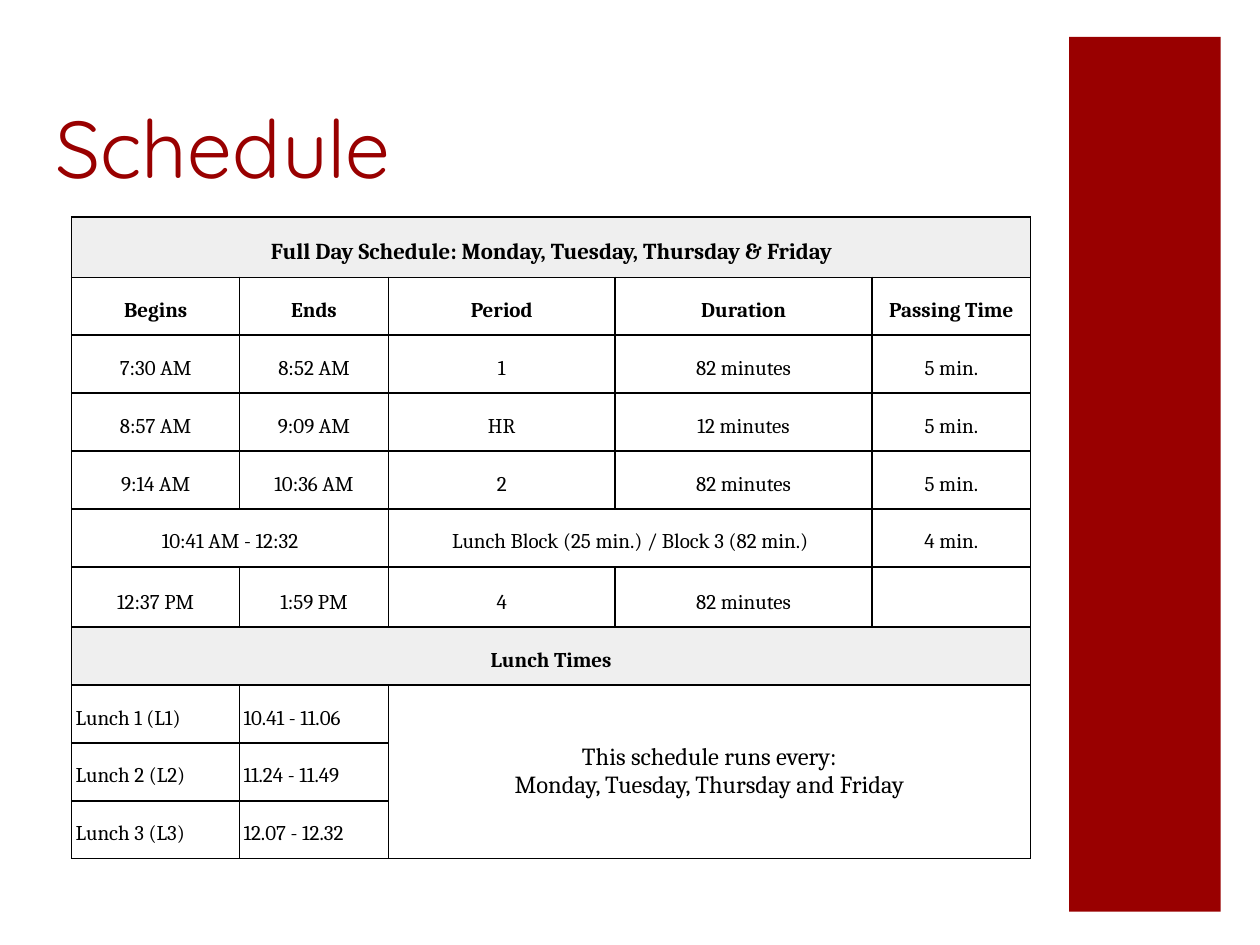
from dataclasses import dataclass

from lxml.etree import SubElement
from pptx import Presentation
from pptx.dml.color import RGBColor
from pptx.enum.shapes import MSO_SHAPE
from pptx.enum.text import MSO_ANCHOR, PP_ALIGN
from pptx.oxml.ns import qn
from pptx.util import Pt


@dataclass(frozen=True)
class Theme:
    accent: str = "990000"
    ink: str = "000000"
    band: str = "EFEFEF"
    paper: str = "FFFFFF"
    title_font: str = "Quicksand"
    body_font: str = "Cambria"
    title_size: float = 46
    heading_size: float = 13
    body_size: float = 12
    note_size: float = 14
    border: float = 1


THEME = Theme()
COLUMN_WIDTHS = [96, 85, 129.5, 147, 90.5]
ROW_HEIGHTS = [34.5] + [33.1] * 5 + [34.5] + [33.1] * 4
HEADING_ROW, HEADER_ROW, LUNCH_ROW = 0, 1, 7
NOTE_CELL = (8, 2)

# None marks a cell covered by a merge.
ROWS = [
    ["Full Day Schedule: Monday, Tuesday, Thursday & Friday", None, None, None, None],
    ["Begins", "Ends", "Period", "Duration", "Passing Time"],
    ["7:30 AM", "8:52 AM", "1", "82 minutes", "5 min."],
    ["8:57 AM", "9:09 AM", "HR", "12 minutes", "5 min."],
    ["9:14 AM", "10:36 AM", "2", "82 minutes", "5 min."],
    ["10:41 AM - 12:32", None, "Lunch Block (25 min.) / Block 3 (82 min.)", None, "4 min."],
    ["12:37 PM", "1:59 PM", "4", "82 minutes", ""],
    ["Lunch Times", None, None, None, None],
    ["Lunch 1 (L1)", "10.41 - 11.06",
     "This schedule runs every:\nMonday, Tuesday, Thursday and Friday", None, None],
    ["Lunch 2 (L2)", "11.24 - 11.49", None, None, None],
    ["Lunch 3 (L3)", "12.07 - 12.32", None, None, None],
]
MERGES = [
    ((0, 0), (0, 4)),
    ((5, 0), (5, 1)),
    ((5, 2), (5, 3)),
    ((7, 0), (7, 4)),
    ((8, 2), (10, 4)),
]


def write_text(frame, text, *, font, size, color, bold=False,
               align=PP_ALIGN.LEFT, spacing=1.0):
    """Fill a text frame, one paragraph for each line of text."""
    for index, line in enumerate(text.split("\n")):
        paragraph = frame.add_paragraph() if index else frame.paragraphs[0]
        paragraph.alignment = align
        paragraph.line_spacing = spacing
        if not line:
            # An empty cell needs its own type size, or its row grows.
            SubElement(paragraph._p, qn("a:endParaRPr"), sz=str(int(size * 100)))
            continue
        run = paragraph.add_run()
        run.text = line
        run.font.name = font
        run.font.size = Pt(size)
        run.font.bold = bold
        run.font.color.rgb = RGBColor.from_string(color)


def set_borders(cell, color, width):
    properties = cell._tc.get_or_add_tcPr()
    for index, side in enumerate(("lnL", "lnR", "lnT", "lnB")):
        line = SubElement(properties, qn(f"a:{side}"), w=str(int(Pt(width))))
        fill = SubElement(line, qn("a:solidFill"))
        SubElement(fill, qn("a:srgbClr"), val=color)
        properties.insert(index, line)


class SlideBuilder:
    def __init__(self, slide, theme):
        self.slide = slide
        self.theme = theme

    def title(self, text, left, top, width, height):
        shape = self.slide.shapes.title
        shape.left, shape.top = Pt(left), Pt(top)
        shape.width, shape.height = Pt(width), Pt(height)
        shape.text_frame.vertical_anchor = MSO_ANCHOR.BOTTOM
        write_text(shape.text_frame, text, font=self.theme.title_font,
                   size=self.theme.title_size, color=self.theme.accent)

    def side_bar(self, left, top, width, height):
        shape = self.slide.shapes.add_shape(
            MSO_SHAPE.RECTANGLE, Pt(left), Pt(top), Pt(width), Pt(height))
        shape.shadow.inherit = False
        shape.fill.solid()
        shape.fill.fore_color.rgb = RGBColor.from_string(self.theme.accent)
        shape.line.fill.background()

    def schedule_table(self, left, top):
        frame = self.slide.shapes.add_table(
            len(ROWS), len(COLUMN_WIDTHS), Pt(left), Pt(top),
            Pt(sum(COLUMN_WIDTHS)), Pt(sum(ROW_HEIGHTS)))
        table = frame.table
        table.first_row = table.horz_banding = False
        for column, width in zip(table.columns, COLUMN_WIDTHS):
            column.width = Pt(width)
        for row, height in zip(table.rows, ROW_HEIGHTS):
            row.height = Pt(height)
        for first, last in MERGES:
            table.cell(*first).merge(table.cell(*last))
        for row, texts in enumerate(ROWS):
            for column, text in enumerate(texts):
                self.schedule_cell(table.cell(row, column), row, column, text)

    def schedule_cell(self, cell, row, column, text):
        theme = self.theme
        is_band = row in (HEADING_ROW, LUNCH_ROW)
        is_note = (row, column) == NOTE_CELL
        cell.fill.solid()
        cell.fill.fore_color.rgb = RGBColor.from_string(
            theme.band if is_band else theme.paper)
        set_borders(cell, theme.ink, theme.border)
        cell.margin_left = cell.margin_right = Pt(2.2)
        cell.margin_top = cell.margin_bottom = Pt(7.2)
        cell.vertical_anchor = MSO_ANCHOR.MIDDLE if is_note else MSO_ANCHOR.BOTTOM
        if text is None:
            return
        size = theme.body_size
        if row == HEADING_ROW:
            size = theme.heading_size
        elif is_note:
            size = theme.note_size
        centred = row <= LUNCH_ROW or is_note
        write_text(cell.text_frame, text, font=theme.body_font, size=size,
                   color=theme.ink, bold=is_band or row == HEADER_ROW,
                   align=PP_ALIGN.CENTER if centred else PP_ALIGN.LEFT,
                   spacing=1.15 if row < LUNCH_ROW else 1.0)


def main():
    presentation = Presentation()
    presentation.slide_width, presentation.slide_height = Pt(720), Pt(540)
    slide = presentation.slides.add_slide(presentation.slide_layouts[5])
    builder = SlideBuilder(slide, THEME)
    builder.side_bar(611, 21, 86.5, 500)
    builder.title("Schedule", 24.5, 25, 534, 90)
    builder.schedule_table(41, 124)
    presentation.save("out.pptx")


if __name__ == "__main__":
    main()
